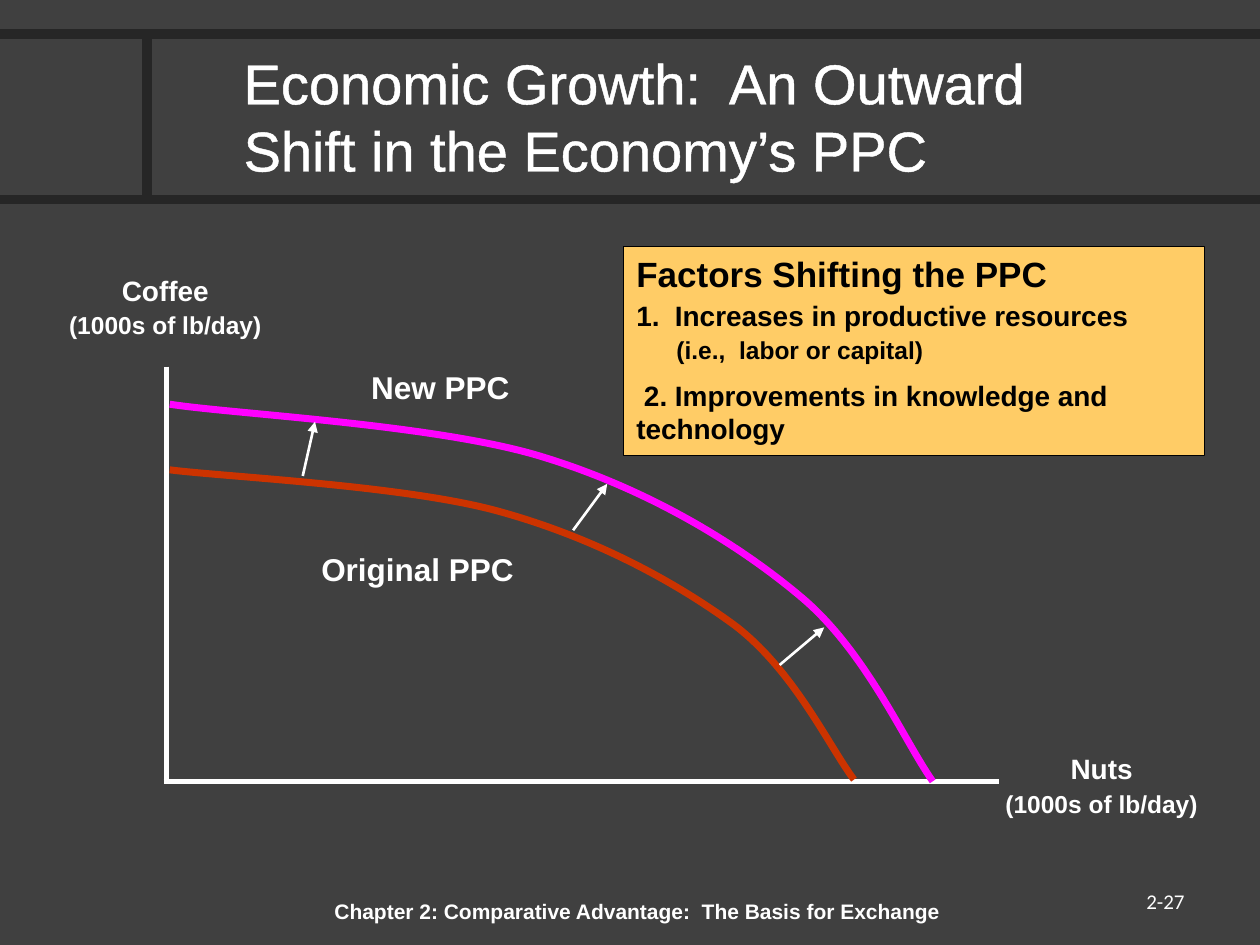
from dataclasses import dataclass

from lxml.etree import SubElement
from pptx import Presentation
from pptx.dml.color import RGBColor
from pptx.enum.shapes import MSO_CONNECTOR as Connector, MSO_SHAPE as Preset
from pptx.enum.text import MSO_ANCHOR as Anchor, MSO_AUTO_SIZE as AutoSize, PP_ALIGN as Align
from pptx.oxml.ns import qn
from pptx.util import Pt


@dataclass(frozen=True)
class Theme:
    background: str = "404040"
    frame: str = "262626"
    light: str = "FFFFFF"
    dark: str = "000000"
    panel: str = "FFCC66"
    original_curve: str = "CC3300"
    new_curve: str = "FF00FF"
    font: str = "Arial"
    number_font: str = "Calibri"
    title: int = 32
    heading: int = 20
    label: int = 18
    body: int = 16
    detail: int = 14
    footer: int = 12


@dataclass(frozen=True)
class Box:
    left: float
    top: float
    width: float
    height: float

    def inner(self, left, top, width, height):
        """Return a box whose position is given relative to this one."""
        return Box(self.left + left, self.top + top, width, height)

    def point(self, x, y):
        return Pt(self.left + x), Pt(self.top + y)

    def lengths(self):
        return Pt(self.left), Pt(self.top), Pt(self.width), Pt(self.height)


THEME = Theme()


def color(value):
    return RGBColor.from_string(value)


def write(frame, text, size, *, ink=THEME.light, bold=True, font=THEME.font,
          align=Align.LEFT, before=0, indent=0, first=False):
    """Add one formatted paragraph; the first one uses the frame's own paragraph."""
    paragraph = frame.paragraphs[0] if first else frame.add_paragraph()
    paragraph.alignment = align
    paragraph.space_before = Pt(before)
    if indent:
        paragraph._p.get_or_add_pPr().set("marL", str(Pt(indent)))
    run = paragraph.add_run()
    run.text = text
    run.font.name, run.font.size, run.font.bold = font, Pt(size), bold
    run.font.color.rgb = color(ink)
    return run


def add_label(slide, box, lines, *, anchor=Anchor.TOP, **style):
    """Place a text box holding (text, size) lines."""
    frame = slide.shapes.add_textbox(*box.lengths()).text_frame
    frame.word_wrap = True
    frame.vertical_anchor = anchor
    for index, (text, size) in enumerate(lines):
        write(frame, text, size, first=index == 0, before=2 if index else 0, **style)


def add_line(slide, start, end, ink, width, arrow=False):
    line = slide.shapes.add_connector(Connector.STRAIGHT, *start, *end)
    line.line.color.rgb = color(ink)
    line.line.width = Pt(width)
    if arrow:
        SubElement(line.line._get_or_add_ln(), qn("a:tailEnd"), type="triangle")
    SubElement(line._element.spPr, qn("a:effectLst"))


def add_curve(slide, box, points, ink):
    """Draw cubic Bézier segments: a start point, then three points for each segment."""
    start, *others = [box.point(*point) for point in points]
    builder = slide.shapes.build_freeform(*start)
    builder.add_line_segments(others, close=False)
    curve = builder.convert_to_shape()
    outline = next(curve._element.iter(qn("a:path")))
    steps = outline.findall(qn("a:lnTo"))
    for index in range(0, len(steps), 3):
        segment = SubElement(outline, qn("a:cubicBezTo"))
        for step in steps[index:index + 3]:
            segment.append(step[0])
            outline.remove(step)
    curve.shadow.inherit = False
    curve.fill.background()
    curve.line.color.rgb = color(ink)
    curve.line.width = Pt(4)


def add_header(slide, box):
    """Draw the dark frame lines and fill the title placeholder."""
    bottom, divider = box.height, 84
    for start, end in [((0, 0), (box.width, 0)),
                       ((0, bottom), (box.width, bottom)),
                       ((divider, 0), (divider, bottom))]:
        add_line(slide, box.point(*start), box.point(*end), THEME.frame, 5.5)

    title = slide.shapes.title
    area = box.inner(132, 3.5, 534, 86)
    title.left, title.top, title.width, title.height = area.lengths()
    frame = title.text_frame
    frame.word_wrap = True
    frame.auto_size = AutoSize.NONE
    frame.vertical_anchor = Anchor.MIDDLE
    frame.margin_right = Pt(14)
    run = write(frame, "Economic Growth:  An Outward Shift in the Economy’s PPC",
                THEME.title, bold=False, first=True)
    properties = run.font._element
    outline = SubElement(properties, qn("a:ln"), w=str(Pt(1.45)))
    fill = SubElement(outline, qn("a:solidFill"))
    SubElement(fill, qn("a:srgbClr"), val=THEME.light)
    properties.insert(0, outline)


def add_diagram(slide, box):
    """Draw both curves on axes that run along the box's left and bottom sides."""
    bottom = box.height
    add_line(slide, box.point(0, 0), box.point(0, bottom), THEME.light, 3)
    add_line(slide, box.point(-1.5, bottom), box.point(box.width, bottom), THEME.light, 3)

    unit = ("(1000s of lb/day)", THEME.detail)
    for name, place in [("Coffee", (-68.5, -57, 136, 45)),
                        ("Nuts", (470, 216.5, 129, 45))]:
        add_label(slide, box.inner(*place), [(name, THEME.body), unit], align=Align.CENTER)

    add_curve(slide, box, [(2, 59),
                           (33, 63), (138, 68), (191, 83),
                           (245, 98), (291, 123), (325, 148),
                           (359, 174), (379, 217.5), (393, 236)], THEME.original_curve)
    add_curve(slide, box, [(2, 21.5),
                           (37, 27), (153, 33), (213, 51),
                           (273, 69), (325, 100), (362, 131),
                           (399.5, 162), (422, 214.5), (438, 237)], THEME.new_curve)
    for name, place in [("Original PPC", (81.5, 101, 150, 29)),
                        ("New PPC", (110, -3, 119, 29))]:
        add_label(slide, box.inner(*place), [(name, THEME.label)])

    for start, end in [((78, 62.5), (85, 31.5)),
                       ((232.5, 93.5), (252, 67)),
                       ((350.5, 170.5), (376, 149))]:
        add_line(slide, box.point(*start), box.point(*end), THEME.light, 1.5, arrow=True)


def add_factors(slide, box):
    panel = slide.shapes.add_shape(Preset.RECTANGLE, *box.lengths())
    panel.shadow.inherit = False
    panel.fill.solid()
    panel.fill.fore_color.rgb = color(THEME.panel)
    panel.line.color.rgb = color(THEME.dark)
    panel.line.width = Pt(0.75)
    frame = panel.text_frame
    frame.word_wrap = True
    frame.vertical_anchor = Anchor.TOP
    write(frame, "Factors Shifting the PPC", THEME.heading, ink=THEME.dark, first=True)
    for text, size, before, indent in [
            ("1.  Increases in productive resources", THEME.body, 2, 0),
            ("(i.e.,  labor or capital)", THEME.detail, 1.5, 23),
            (" 2. Improvements in knowledge and technology", THEME.body, 8, 0)]:
        write(frame, text, size, ink=THEME.dark, before=before, indent=indent)


def add_footer(slide, box):
    add_label(slide, box.inner(184, 9.5, 372, 18),
              [("Chapter 2: Comparative Advantage:  The Basis for Exchange", THEME.footer)])
    add_label(slide, box.inner(615, 0, 69, 29), [("2-27", THEME.footer)],
              anchor=Anchor.MIDDLE, align=Align.RIGHT, bold=False, font=THEME.number_font)


def main():
    presentation = Presentation()
    presentation.slide_width, presentation.slide_height = Pt(720), Pt(540)
    slide = presentation.slides.add_slide(presentation.slide_layouts[5])
    slide.background.fill.solid()
    slide.background.fill.fore_color.rgb = color(THEME.background)
    add_header(slide, Box(0, 19.5, 720, 94.5))
    add_diagram(slide, Box(95, 209.5, 476, 237))
    add_factors(slide, Box(356.5, 141, 332, 119.5))
    add_footer(slide, Box(0, 500.5, 720, 29))
    presentation.save("out.pptx")


if __name__ == "__main__":
    main()
